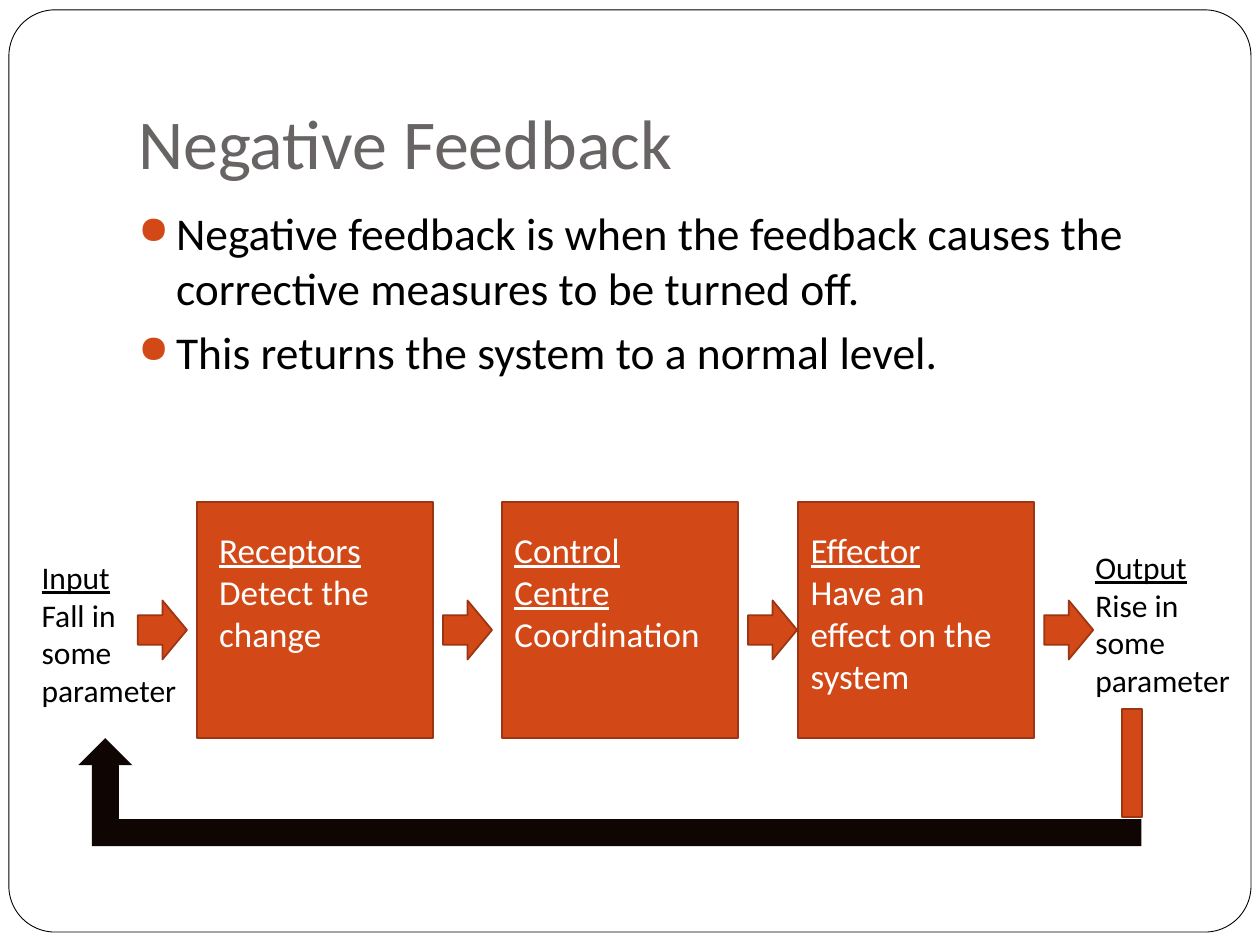
from lxml import etree
from pptx import Presentation
from pptx.dml.color import RGBColor
from pptx.enum.shapes import MSO_SHAPE
from pptx.enum.text import MSO_ANCHOR, MSO_AUTO_SIZE
from pptx.oxml.ns import qn
from pptx.util import Cm, Pt

RECT, FRAME = MSO_SHAPE.RECTANGLE, MSO_SHAPE.ROUNDED_RECTANGLE
ARROW, RETURN_ARROW = MSO_SHAPE.RIGHT_ARROW, MSO_SHAPE.BENT_UP_ARROW
BOTTOM, TOP = MSO_ANCHOR.BOTTOM, MSO_ANCHOR.TOP
GROW = MSO_AUTO_SIZE.SHAPE_TO_FIT_TEXT

THEME = {
    "font": "Calibri",
    "title": "696464", "text": "000000", "paper": "FFFFFF",
    "accent": "D34817", "edge": "9C3511", "return": "0F0503",
    "title_size": 40, "body_size": 26, "stage_size": 20, "end_size": 18,
}

TITLE = "Negative Feedback"
POINTS = [
    "Negative feedback is when the feedback causes the corrective measures to be turned off.",
    "This returns the system to a normal level.",
]
# heading, detail, box left, label box (left, top, width, height), all in cm
STAGES = [
    ("Receptors", "Detect the change", 3.97, (4.17, 10.52, 4.17, 3.57)),
    ("Control Centre", "Coordination", 10.12, (10.12, 10.52, 4.57, 3.57)),
    ("Effector", "Have an effect on the system", 16.09, (16.09, 10.52, 4.57, 4.45)),
]
# heading, detail, label box
ENDS = [
    ("Output", "Rise in some parameter", (21.83, 10.92, 3.57, 3.33)),
    ("Input", "Fall in some parameter", (0.59, 11.12, 3.37, 3.33)),
]
BOX_TOP, BOX_SIDE = 10.12, 4.76
ARROW_W, ARROW_H, ARROW_GAP = 0.99, 1.19, 0.2


def color(name):
    return RGBColor.from_string(THEME[name])


def add_block(slide, kind, area, fill="accent", edge="edge", weight=1):
    block = slide.shapes.add_shape(kind, *map(Cm, area))
    block.shadow.inherit = False
    block.fill.solid()
    block.fill.fore_color.rgb = color(fill)
    block.line.color.rgb = color(edge)
    block.line.width = Pt(weight)
    return block


def add_text(slide, area, lines, size, ink, anchor=TOP):
    frame = slide.shapes.add_textbox(*map(Cm, area)).text_frame
    frame.word_wrap = True
    frame.vertical_anchor = anchor
    frame.text = "\n".join(lines)
    for paragraph in frame.paragraphs:
        paragraph.font.name = THEME["font"]
        paragraph.font.size = Pt(THEME[size])
        paragraph.font.color.rgb = color(ink)
    return frame


def add_label(slide, area, heading, detail, size, ink):
    """Add an underlined heading with its detail below."""
    frame = add_text(slide, area, [heading, detail], size, ink)
    frame.auto_size = GROW
    frame.paragraphs[0].font.underline = True


def add_bullet(paragraph):
    paragraph.space_before = Pt(5.8)
    props = paragraph._p.get_or_add_pPr()
    props.set("marL", str(Cm(0.76)))
    props.set("indent", str(-Cm(0.76)))
    bullet = [
        etree.Element(qn("a:buClr")),
        etree.Element(qn("a:buSzPct"), val="85000"),
        etree.Element(qn("a:buChar"), char="●"),
    ]
    etree.SubElement(bullet[0], qn("a:srgbClr"), val=THEME["accent"])
    defaults = props.find(qn("a:defRPr"))
    for part in bullet:
        defaults.addprevious(part)


def main():
    deck = Presentation()
    deck.slide_width, deck.slide_height = Cm(25.4), Cm(19.05)
    slide = deck.slides.add_slide(deck.slide_layouts[6])

    frame = add_block(slide, FRAME, (0.18, 0.2, 25.04, 18.59), "paper", "text", 0.5)
    frame.adjustments[0] = 0.05

    title = add_text(slide, (2.54, 0.76, 21.59, 3.18), [TITLE], "title_size", "title", BOTTOM)
    title.margin_bottom = Cm(0.25)
    body = add_text(slide, (2.54, 4.01, 21.59, 12.7), POINTS, "body_size", "text")
    for paragraph in body.paragraphs:
        add_bullet(paragraph)

    for heading, detail, left, label_area in STAGES:
        add_block(slide, RECT, (left, BOX_TOP, BOX_SIDE, BOX_SIDE))
        add_label(slide, label_area, heading, detail, "stage_size", "paper")

    box_lefts = [stage[2] for stage in STAGES]
    arrow_lefts = [box_lefts[0] - ARROW_GAP - ARROW_W]
    arrow_lefts += [left + BOX_SIDE + ARROW_GAP for left in box_lefts]
    arrow_top = BOX_TOP + (BOX_SIDE - ARROW_H) / 2 + 0.2
    for left in arrow_lefts:
        add_block(slide, ARROW, (left, arrow_top, ARROW_W, ARROW_H))

    for heading, detail, label_area in ENDS:
        add_label(slide, label_area, heading, detail, "end_size", "text")

    feedback = add_block(slide, RETURN_ARROW, (1.58, 14.88, 21.43, 2.18), "return")
    feedback.line.fill.background()
    feedback._element.spPr.find(qn("a:xfrm")).set("flipH", "1")
    add_block(slide, RECT, (22.62, 14.29, 0.4, 2.18))

    deck.save("out.pptx")


if __name__ == "__main__":
    main()
